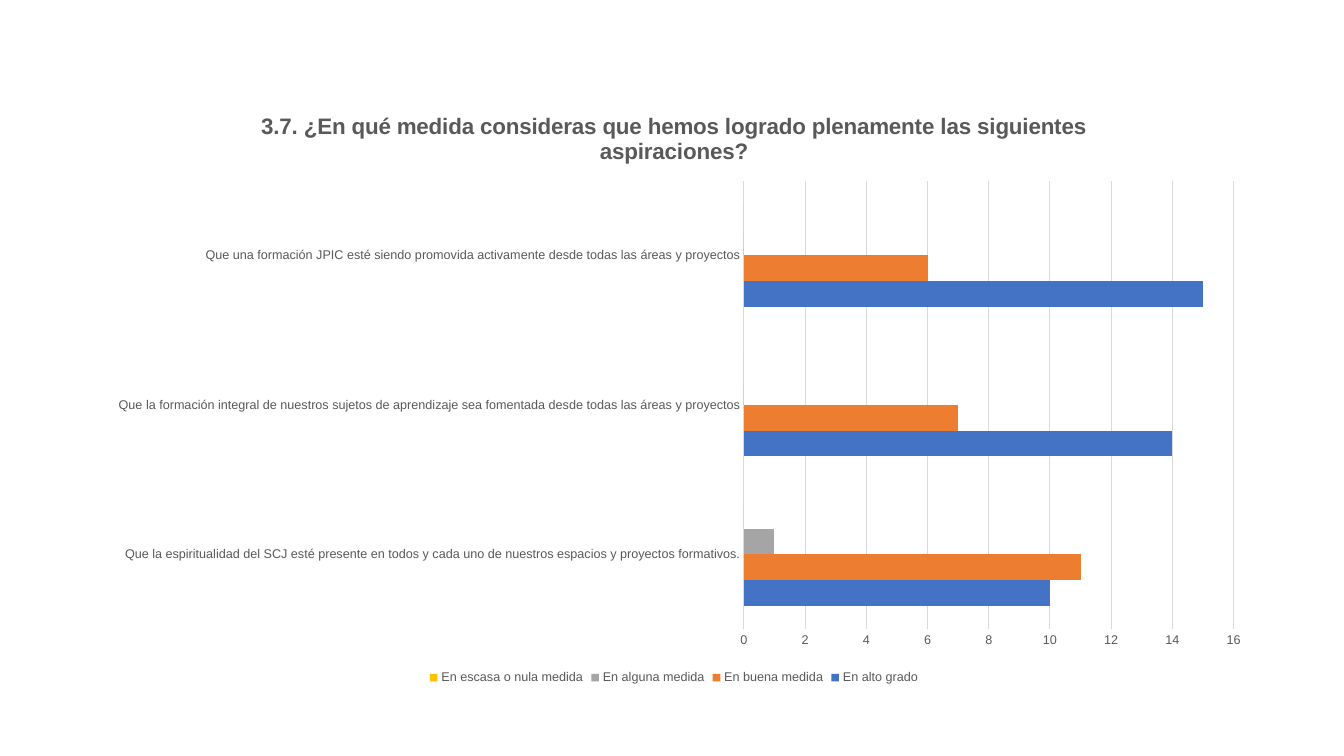
from lxml import etree
from pptx import Presentation
from pptx.chart.data import CategoryChartData
from pptx.dml.color import RGBColor
from pptx.enum.chart import XL_CHART_TYPE, XL_LEGEND_POSITION, XL_TICK_MARK
from pptx.oxml.ns import qn
from pptx.util import Emu, Pt

BAR = XL_CHART_TYPE.BAR_CLUSTERED
BOTTOM = XL_LEGEND_POSITION.BOTTOM
NO_TICK = XL_TICK_MARK.NONE

GREY = RGBColor(0x59, 0x59, 0x59)
RULE = RGBColor(0xD9, 0xD9, 0xD9)
BLUE = RGBColor(0x44, 0x72, 0xC4)
ORANGE = RGBColor(0xED, 0x7D, 0x31)
SILVER = RGBColor(0xA5, 0xA5, 0xA5)
GOLD = RGBColor(0xFF, 0xC0, 0x00)

FACE = "Arial"
TITLE = ("3.7. ¿En qué medida consideras que hemos logrado plenamente "
         "las siguientes aspiraciones?")
GOALS = [
    "Que la espiritualidad del SCJ esté presente en todos y cada uno de "
    "nuestros espacios y proyectos formativos.",
    "Que la formación integral de nuestros sujetos de aprendizaje sea "
    "fomentada desde todas las áreas y proyectos",
    "Que una formación JPIC esté siendo promovida activamente desde todas "
    "las áreas y proyectos",
]
GRADES = [
    ("En alto grado", (10, 14, 15), BLUE),
    ("En buena medida", (11, 7, 6), ORANGE),
    ("En alguna medida", (1, 0, 0), SILVER),
    ("En escasa o nula medida", (0, 0, 0), GOLD),
]


def px(n):
    return Emu(round(n * 914400 / 100.8))


def style(font, size, bold=False):
    font.name = FACE
    font.size = Pt(size)
    font.bold = bold
    font.color.rgb = GREY


def rule(line):
    line.color.rgb = RULE
    line.width = Pt(0.75)


def set_plot(chart, x, y, w, h):
    area = chart.element.find(".//" + qn("c:plotArea"))
    for old in area.findall(qn("c:layout")):
        area.remove(old)
    layout = etree.Element(qn("c:layout"))
    area.insert(0, layout)
    manual = etree.SubElement(layout, qn("c:manualLayout"))
    parts = [("layoutTarget", "inner"), ("xMode", "edge"), ("yMode", "edge"),
             ("x", x), ("y", y), ("w", w), ("h", h)]
    for tag, val in parts:
        etree.SubElement(manual, qn("c:" + tag)).set("val", str(val))


def add_survey(slide, x, y, w, h):
    data = CategoryChartData()
    data.categories = GOALS
    for name, vals, _ in GRADES:
        data.add_series(name, vals)
    frame = slide.shapes.add_chart(BAR, px(x), px(y), px(w), px(h), data)
    chart = frame.chart
    style(chart.font, 10)

    chart.has_title = True
    head = chart.chart_title.text_frame
    head.text = TITLE
    style(head.paragraphs[0].runs[0].font, 16, True)
    chart.chart_title.include_in_layout = False

    chart.has_legend = True
    chart.legend.position = BOTTOM
    chart.legend.include_in_layout = False
    style(chart.legend.font, 9)

    plot = chart.plots[0]
    plot.vary_by_categories = False
    plot.gap_width = 182
    plot.overlap = 0
    for series, (_, _, color) in zip(plot.series, GRADES):
        series.format.fill.solid()
        series.format.fill.fore_color.rgb = color

    for axis in (chart.category_axis, chart.value_axis):
        axis.major_tick_mark = NO_TICK
        axis.minor_tick_mark = NO_TICK
        style(axis.tick_labels.font, 9)
    rule(chart.category_axis.format.line)
    scale = chart.value_axis
    scale.minimum_scale = 0
    scale.maximum_scale = 16
    scale.major_unit = 2
    scale.format.line.fill.background()
    scale.has_major_gridlines = True
    rule(scale.major_gridlines.format.line)
    set_plot(chart, 0.56, 0.15, 0.42, 0.75)


def main():
    deck = Presentation()
    deck.slide_width = px(1344)
    deck.slide_height = px(756)
    slide = deck.slides.add_slide(deck.slide_layouts[6])
    add_survey(slide, 91, 91, 1166, 598)
    deck.save("out.pptx")


if __name__ == "__main__":
    main()
